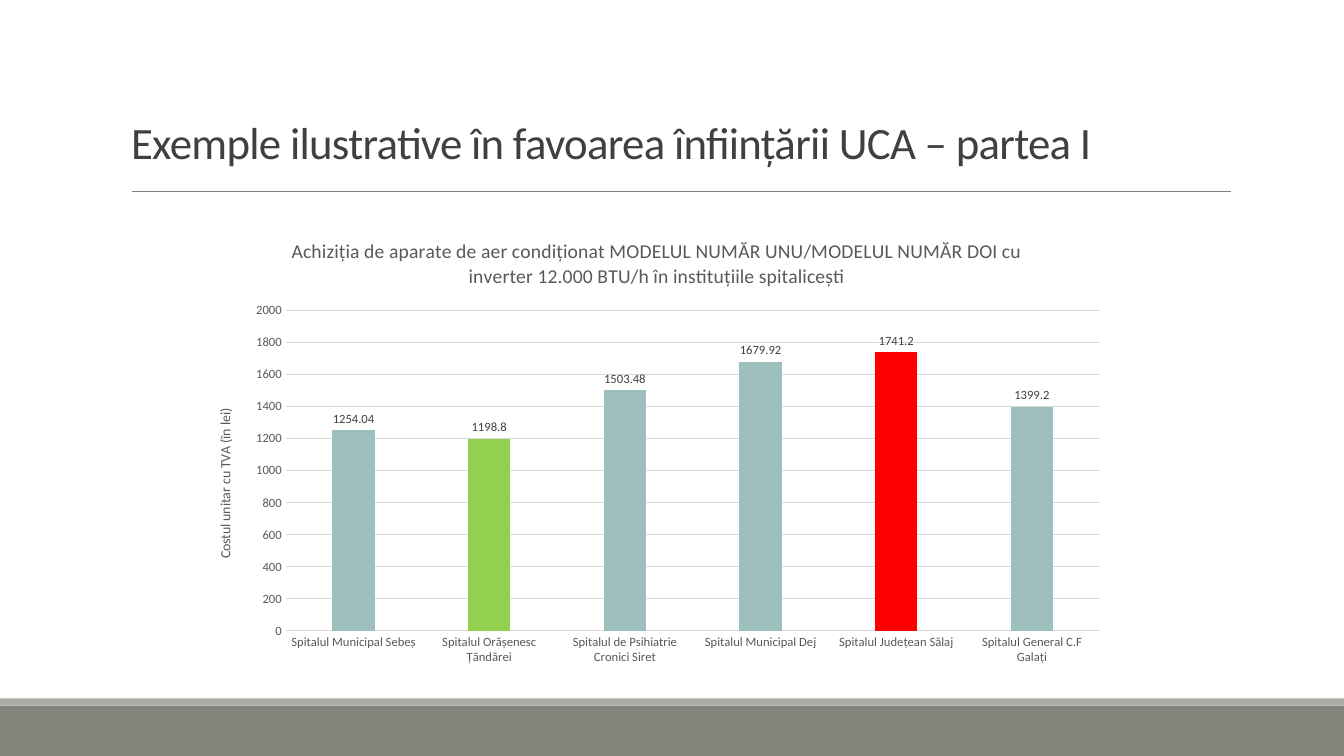
from lxml.etree import SubElement
from pptx import Presentation
from pptx.chart.data import CategoryChartData as ChartData
from pptx.dml.color import RGBColor as RGB
from pptx.enum.chart import XL_CHART_TYPE as Kind, XL_LABEL_POSITION as Spot
from pptx.enum.chart import XL_TICK_MARK as Tick
from pptx.enum.shapes import MSO_CONNECTOR as Link, MSO_SHAPE as Form
from pptx.enum.text import MSO_ANCHOR as Anchor, MSO_AUTO_SIZE as Fit, PP_ALIGN as Align
from pptx.oxml.ns import qn
from pptx.util import Inches, Pt

# Content
TITLE = "Exemple ilustrative în favoarea înființării UCA – partea I"
HEAD = ("Achiziția de aparate de aer condiționat MODELUL NUMĂR UNU/MODELUL "
        "NUMĂR DOI cu inverter 12.000 BTU/h în instituțiile spitalicești")
UNIT = "Costul unitar cu TVA (în lei)"
COSTS = [
    ("Spitalul Municipal Sebeș", 1254.04, "bar"),
    ("Spitalul Orășenesc Țăndărei", 1198.8, "low"),
    ("Spitalul de Psihiatrie Cronici Siret", 1503.48, "bar"),
    ("Spitalul Municipal Dej", 1679.92, "bar"),
    ("Spitalul Județean Sălaj", 1741.2, "high"),
    ("Spitalul General C.F Galați", 1399.2, "bar"),
]


class Theme:
    font = "Calibri"
    color = {key: RGB.from_string(code) for key, code in {
        "dark": "404040", "text": "595959", "grid": "D9D9D9", "rule": "808080",
        "foot": "82847C", "edge": "ACADA8",
        "bar": "9DBFBE", "low": "92D050", "high": "FF0000"}.items()}
    size = {"title": 32, "head": 14, "unit": 10, "label": 9}


def style(font, size, color):
    font.name = Theme.font
    font.size = Pt(Theme.size[size])
    font.color.rgb = Theme.color[color]
    font.bold = False


def draw(line, color, width):
    line.color.rgb = Theme.color[color]
    line.width = Pt(width)


def caption(owner, text, size):
    frame = owner.text_frame
    frame.text = text
    style(frame.paragraphs[0].font, size, "text")


deck = Presentation()
deck.slide_width, deck.slide_height = Inches(13.33), Inches(7.5)
slide = deck.slides.add_slide(deck.slide_layouts[5])
shapes = slide.shapes

# Footer bands
for color, top, tall in (("foot", 7, 0.5), ("edge", 6.93, 0.07)):
    band = shapes.add_shape(Form.RECTANGLE, 0, Inches(top),
                            deck.slide_width, Inches(tall))
    band.shadow.inherit = False
    band.fill.solid()
    band.fill.fore_color.rgb = Theme.color[color]
    band.line.fill.background()

# Rule under the title
rule = shapes.add_connector(Link.STRAIGHT, Inches(1.31), Inches(1.9),
                            Inches(12.21), Inches(1.9))
draw(rule.line, "rule", 0.5)
SubElement(rule._element.spPr, qn("a:effectLst"))

# Title
title = shapes.title
title.left, title.top = Inches(1.2), Inches(0.31)
title.width, title.height = Inches(11), Inches(1.41)
frame = title.text_frame
frame.text = TITLE
frame.auto_size = Fit.NONE
frame.word_wrap = True
frame.vertical_anchor = Anchor.BOTTOM
para = frame.paragraphs[0]
para.alignment = Align.LEFT
para.line_spacing = 0.85
style(para.font, "title", "dark")
para.runs[0].font._element.set("spc", "-50")

# Chart
data = ChartData()
data.categories = [name for name, _, _ in COSTS]
data.add_series("Series 1", [cost for _, cost, _ in COSTS])
chart = shapes.add_chart(Kind.COLUMN_CLUSTERED, Inches(1.94), Inches(2.18),
                         Inches(9.15), Inches(4.5), data).chart
style(chart.font, "unit", "text")
chart.has_legend = False
chart.has_title = True
caption(chart.chart_title, HEAD, "head")
chart.chart_title.include_in_layout = False

# Axes
cats, vals = chart.category_axis, chart.value_axis
for axis in (cats, vals):
    axis.major_tick_mark = axis.minor_tick_mark = Tick.NONE
    style(axis.tick_labels.font, "label", "text")
draw(cats.format.line, "grid", 0.75)
vals.format.line.fill.background()
vals.minimum_scale, vals.maximum_scale, vals.major_unit = 0, 2000, 200
vals.has_major_gridlines = True
draw(vals.major_gridlines.format.line, "grid", 0.75)
vals.has_title = True
caption(vals.axis_title, UNIT, "unit")

# Columns and their labels
plot = chart.plots[0]
plot.gap_width, plot.overlap = 219, -27
plot.vary_by_categories = False
row = plot.series[0]
row.format.fill.solid()
row.format.fill.fore_color.rgb = Theme.color["bar"]
for spot, (_, _, color) in enumerate(COSTS):
    if color != "bar":
        fill = row.points[spot].format.fill
        fill.solid()
        fill.fore_color.rgb = Theme.color[color]
labels = row.data_labels
labels.show_value = True
labels.position = Spot.OUTSIDE_END
style(labels.font, "label", "dark")

deck.save("out.pptx")
